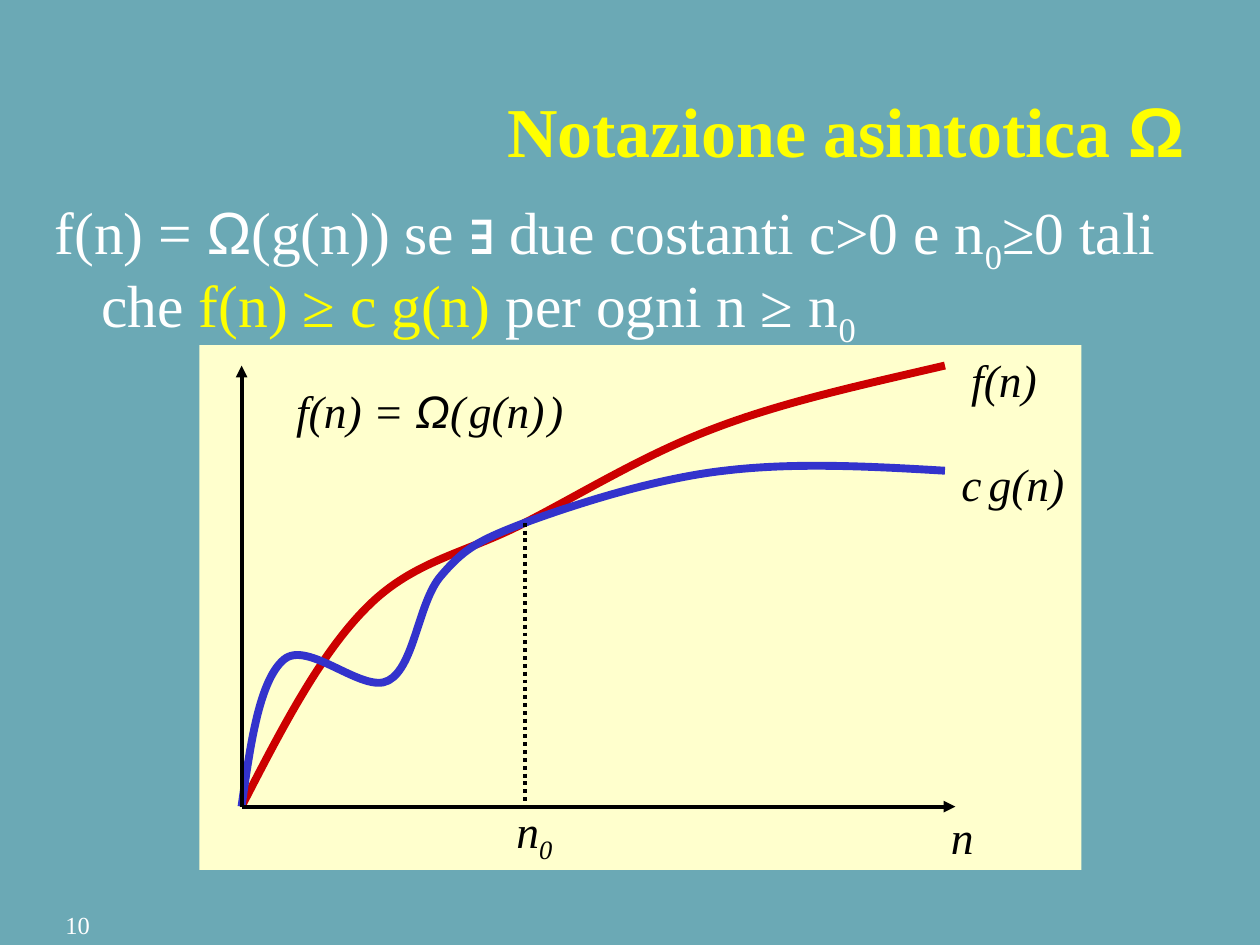
import pptx
import pptx.util
import pptx.dml.color
import pptx.enum.dml
import pptx.enum.shapes
import pptx.enum.text
import pptx.oxml
import pptx.oxml.ns

Cm, Pt = pptx.util.Cm, pptx.util.Pt
qn = pptx.oxml.ns.qn
SERIF, SANS = "Times New Roman", "Arial"
WHITE, BLACK, YELLOW = "FFFFFF", "000000", "FFFF00"
ALIGN = pptx.enum.text.PP_ALIGN


def rgb(code):
    return pptx.dml.color.RGBColor.from_string(code)


def write(runs, box, size, color, bold=False, italic=False, wrap=True,
          align=ALIGN.LEFT, hang=0, top=0.13, space=1.0):
    """Add a text box; each run is (text, changes), lengths are in cm."""
    shape = slide.shapes.add_textbox(*[Cm(v) for v in box])
    frame = shape.text_frame
    frame.word_wrap = wrap
    frame.margin_top = Cm(top)
    para = frame.paragraphs[0]
    para.alignment = align
    para.line_spacing = space
    if hang:
        props = para._p.get_or_add_pPr()
        props.set("marL", str(Cm(hang)))
        props.set("indent", str(-Cm(hang)))
    for text, change in runs:
        run = para.add_run()
        run.text = text
        font = run.font
        font.name = change.get("face", SERIF)
        font.size = Pt(change.get("size", size))
        font.color.rgb = rgb(change.get("color", color))
        font.bold, font.italic = bold, italic
        if change.get("sub"):
            font._element.set("baseline", "-25000")


deck = pptx.Presentation()
deck.slide_width, deck.slide_height = Cm(25.4), Cm(19.05)
slide = deck.slides.add_slide(deck.slide_layouts[6])
slide.background.fill.solid()
slide.background.fill.fore_color.rgb = rgb("6BA9B5")

# Definition and title
sub, omega = ("0", {"sub": True}), ("Ω", {"face": SANS})
write([("f(n) = ", {}), omega, ("(g(n)) se ∃ due costanti c>0 e n", {}), sub,
       ("≥0 tali che ", {}), ("f(n) ≥ c g(n)", {"color": YELLOW}),
       (" per ogni n ≥ n", {}), sub],
      (0.85, 3.6, 24.13, 6.77), 34, WHITE, hang=0.95, top=0.36, space=0.9)
write([("Notazione asintotica ", {}), omega],
      (1.27, 1.48, 22.86, 2.54), 40, YELLOW, bold=True,
      align=ALIGN.RIGHT, hang=0.95, top=0.28)

# Graph panel
panel = slide.shapes.add_shape(pptx.enum.shapes.MSO_SHAPE.RECTANGLE,
                               Cm(4.02), Cm(6.96), Cm(17.78), Cm(10.58))
panel.shadow.inherit = False
panel.fill.solid()
panel.fill.fore_color.rgb = rgb("FFFFCD")
panel.line.fill.background()

# Curves: a start point, then three points for each Bézier piece
left, base, peak = 4.87, 16.26, 7.37
cross = (10.58, 10.54)
red = [(left, base),
       (5.66, 14.73), (6.45, 13.18), (7.41, 12.23),
       (8.36, 11.28), (9.42, 11.15), cross,
       (11.73, 9.95), (12.98, 9.17), (14.39, 8.64),
       (15.8, 8.1), (17.42, 7.75), (19.05, peak)]
blue = [(left, base),
        (5.05, 14.99), (5.23, 13.72), (5.72, 13.3),
        (6.2, 12.88), (7.32, 14), (7.83, 13.72),
        (8.36, 13.44), (8.43, 12.14), (8.89, 11.61),
        (9.35, 11.07), (9.63, 10.9), cross,
        (11.53, 10.19), (13.18, 9.65), (14.6, 9.49),
        (16, 9.32), (17.53, 9.4), (19.05, 9.49)]
lines = []
for dots, color in ((red, "CC0000"), (blue, "3333CC")):
    dots = [(Cm(x), Cm(y)) for x, y in dots]
    pen = slide.shapes.build_freeform(*dots[0])
    pen.add_line_segments(dots[1:], close=False)
    curve = pen.convert_to_shape()
    curve.shadow.inherit = False
    curve.fill.background()
    curve.line.color.rgb = rgb(color)
    curve.line.width = Pt(4.5)
    steps = list(curve._element.iter(qn("a:lnTo")))
    for k in range(0, len(steps), 3):
        bend = pptx.oxml.parse_xml(
            f'<a:cubicBezTo {pptx.oxml.ns.nsdecls("a")}/>')
        steps[k].addprevious(bend)
        for step in steps[k:k + 3]:
            bend.append(step[0])
            step.getparent().remove(step)

# Threshold line and axes
for start, end, arrow in ((cross, (cross[0], base), False),
                          ((left, base), (left, peak), True),
                          ((left, base), (19.26, base), True)):
    line = slide.shapes.add_connector(
        pptx.enum.shapes.MSO_CONNECTOR.STRAIGHT,
        *[Cm(v) for v in start + end])
    line.line.color.rgb = rgb(BLACK)
    line.line.width = Pt(2.25)
    if arrow:
        tip = pptx.oxml.parse_xml(
            f'<a:tailEnd {pptx.oxml.ns.nsdecls("a")} type="triangle"/>')
        line.line._get_or_add_ln().append(tip)
    else:
        line.line.dash_style = pptx.enum.dml.MSO_LINE.ROUND_DOT
    line._element.spPr.append(pptx.oxml.parse_xml(
        f'<a:effectLst {pptx.oxml.ns.nsdecls("a")}/>'))

# Graph labels
thin = (" ", {"size": 8})
for runs, x, y, width in (
        ([("n", {}), sub], 10.16, 16.05, 1.27),
        ([("n", {})], 18.92, 16.18, 0.97),
        ([("f(n) = ", {}), omega, ("(", {}), thin, ("g(n)", {}), thin,
          (")", {})], 5.72, 7.6, 5.89),
        ([("f(n)", {})], 19.33, 6.96, 1.83),
        ([("c", {}), (" ", {"size": 16}), ("g(n)", {})], 19.13, 9.07, 2.59)):
    write(runs, (x, y, width, 1.35), 26, BLACK, italic=True, wrap=False)

write([("10", {})], (1.07, 18.21, 5.28, 0.84), 14, WHITE)

deck.save("out.pptx")
